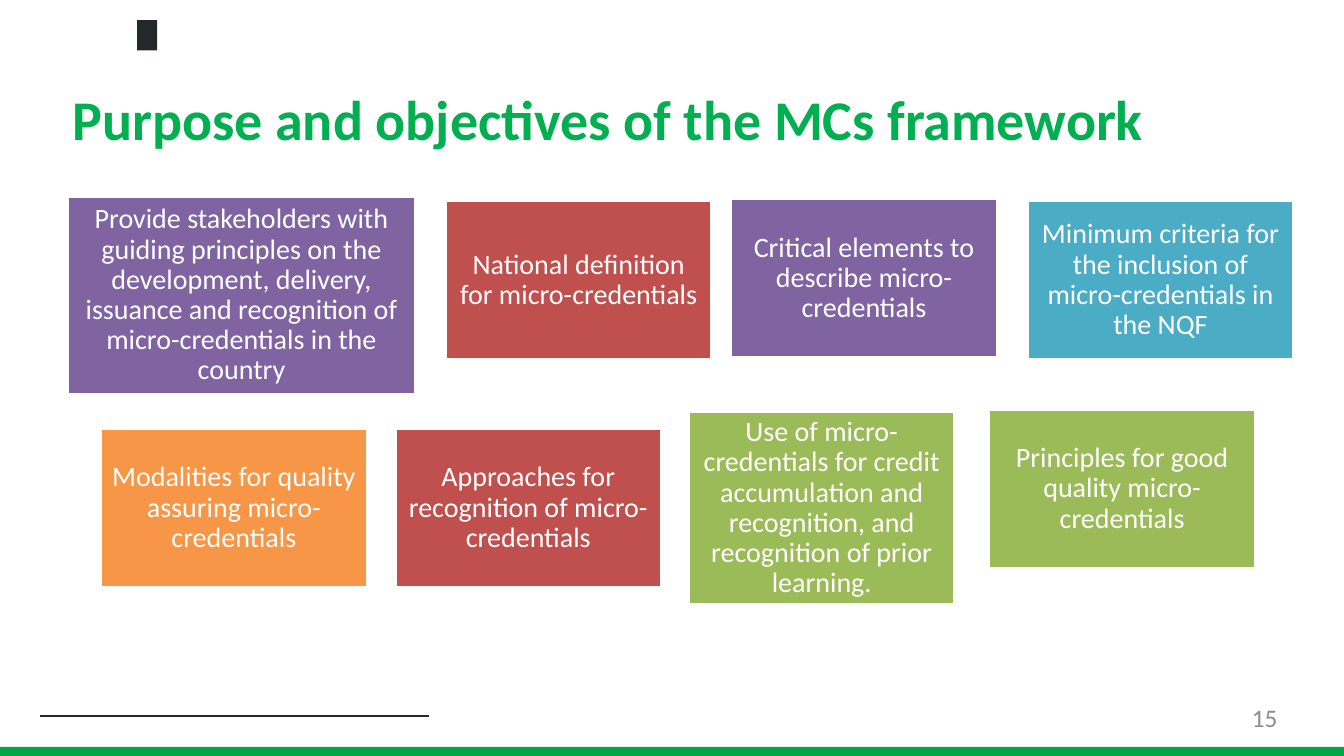
from pptx import Presentation
from pptx import util as u
from pptx.dml.color import RGBColor
from pptx.enum import shapes, text
from pptx.oxml.ns import qn
from lxml import etree

COLOURS = {
    "white": "FFFFFF", "ink": "23282A", "band": "00A643", "title": "00B050",
    "number": "8C8C8C", "purple": "8064A2", "red": "C0504D",
    "blue": "4BACC6", "orange": "F79646", "green": "9BBB59",
}
CARD_WIDTH, CARD_HEIGHT = 2.64, 1.58
CARDS = [
    ("National definition for micro-credentials", "red", (4.42, 1.99, CARD_WIDTH, CARD_HEIGHT)),
    ("Principles for good quality micro-credentials", "green", (9.81, 4.06, CARD_WIDTH, CARD_HEIGHT)),
    ("Critical elements to describe micro-credentials", "purple", (7.25, 1.97, CARD_WIDTH, CARD_HEIGHT)),
    ("Minimum criteria for the inclusion of micro-credentials in the NQF", "blue",
     (10.19, 1.99, CARD_WIDTH, CARD_HEIGHT)),
    ("Modalities for quality assuring micro-credentials", "orange", (1, 4.25, CARD_WIDTH, CARD_HEIGHT)),
    ("Approaches for recognition of micro-credentials", "red", (3.92, 4.25, CARD_WIDTH, CARD_HEIGHT)),
    ("Use of micro-credentials for credit accumulation and recognition, and recognition of prior learning.",
     "green", (6.83, 4.08, CARD_WIDTH, 1.92)),
    ("Provide stakeholders with guiding principles on the development, delivery, issuance and "
     "recognition of micro-credentials in the country", "purple", (0.67, 1.95, 3.45, 1.96)),
]


def colour(name):
    return RGBColor.from_string(COLOURS[name])


def set_all(target, values):
    for name, value in values.items():
        setattr(target, name, value)


def add_block(page, box, fill, line_width=0):
    block = page.shapes.add_shape(shapes.MSO_SHAPE.RECTANGLE, *map(u.Inches, box))
    block.shadow.inherit = False
    block.fill.solid()
    block.fill.fore_color.rgb = colour(fill)
    if line_width:
        block.line.color.rgb = colour("white")
        block.line.width = u.Pt(line_width)
    else:
        block.line.fill.background()
    return block


def write(shape, words, size, shade, inset=0, anchor="TOP", bold=False, **layout):
    frame = shape.text_frame
    margins = {f"margin_{side}": u.Inches(inset) for side in ("left", "top", "right", "bottom")}
    set_all(frame, {"word_wrap": True, "vertical_anchor": text.MSO_ANCHOR[anchor], **margins})
    para = frame.paragraphs[0]
    set_all(para, layout)
    span = para.add_run()
    span.text = words
    set_all(span.font, {"name": "Calibri", "size": u.Pt(size), "bold": bold})
    span.font.color.rgb = colour(shade)
    return para


def add_frame(page, box):
    left, top, width, height = box
    rule_top = top + 7.1
    rule = page.shapes.add_connector(
        shapes.MSO_CONNECTOR.STRAIGHT, u.Inches(left + 0.4), u.Inches(rule_top),
        u.Inches(left + 4.25), u.Inches(rule_top))
    rule.line.color.rgb = colour("ink")
    rule.line.width = u.Pt(1.5)
    etree.SubElement(rule._element.spPr, qn("a:effectLst"))
    add_block(page, (left + 1.36, top + 0.2, 0.2, 0.3), "ink")
    add_block(page, (left, top + height - 0.09, width, 0.09), "band")


def add_title(page, box):
    para = write(add_block(page, box, "white", 0.5), "Purpose and objectives of the MCs framework",
                 40, "title", bold=True, alignment=text.PP_ALIGN.LEFT, line_spacing=u.Pt(51.6))
    para._p.get_or_add_pPr().set("marL", str(u.Inches(0.09)))


def add_card(page, box, words, fill):
    write(add_block(page, box, fill, 2), words, 20, "white", inset=0.08, anchor="MIDDLE",
          alignment=text.PP_ALIGN.CENTER, line_spacing=0.9)


def add_number(page, box):
    write(page.shapes.add_textbox(*map(u.Inches, box)), "15", 18, "number",
          alignment=text.PP_ALIGN.RIGHT)


def main():
    deck = Presentation()
    set_all(deck, {"slide_width": u.Inches(13.33), "slide_height": u.Inches(7.5)})
    page = deck.slides.add_slide(deck.slide_layouts[6])
    add_frame(page, (0, 0, 13.33, 7.5))
    add_title(page, (0.63, 0.79, 10.83, 0.73))
    for words, fill, box in CARDS:
        add_card(page, box, words, fill)
    add_number(page, (9.6, 6.97, 3.07, 0.38))
    deck.save("out.pptx")


if __name__ == "__main__":
    main()
